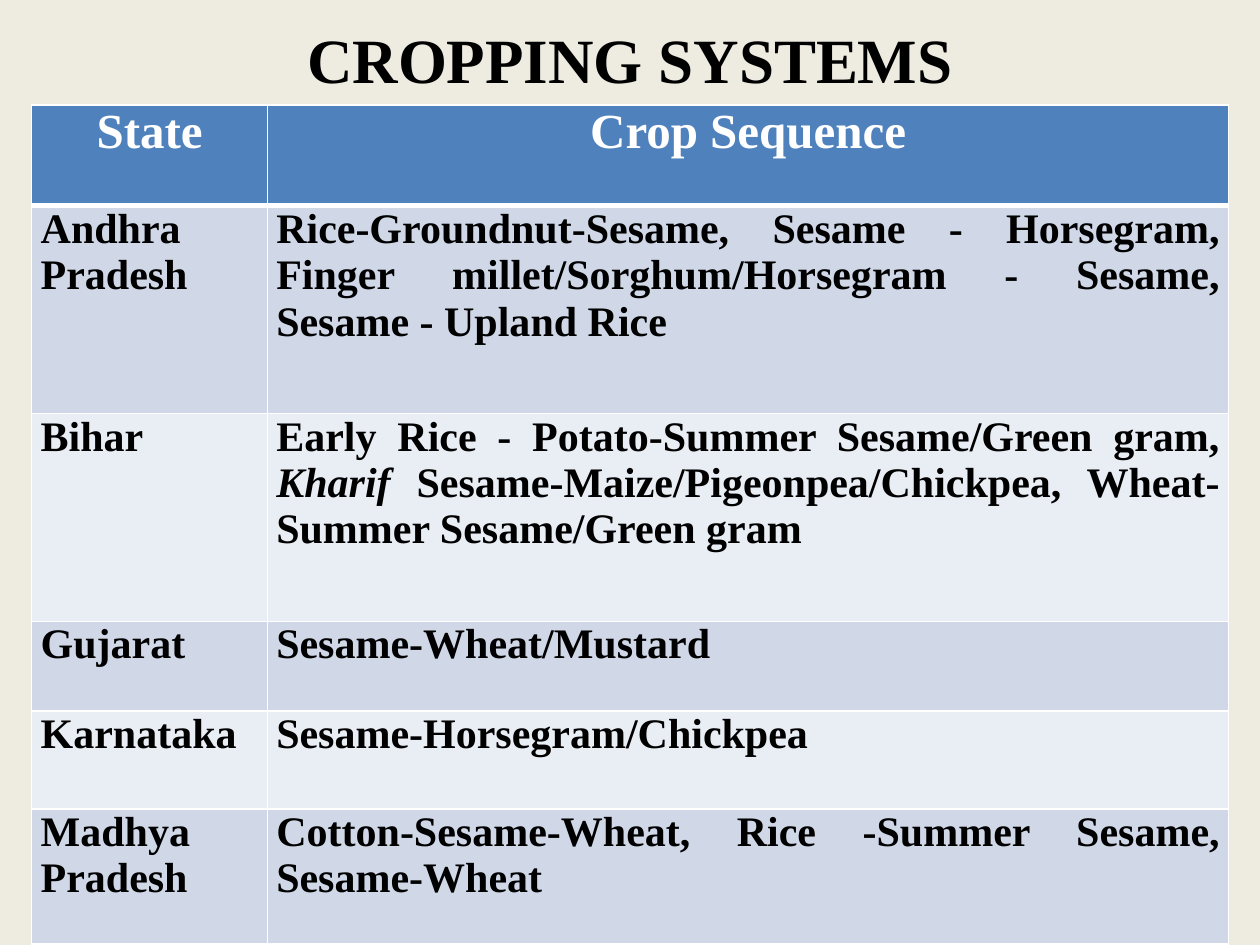
"""Build the cropping systems slide with a table of states and crop sequences."""
import pptx
import pptx.dml.color
import pptx.enum.text
import pptx.oxml
import pptx.oxml.ns
import pptx.util
from pptx.util import Cm

ALIGN = pptx.enum.text.PP_ALIGN
COLUMN_WIDTHS = [4.75, 19.38]
ROW_HEIGHTS = [2.03, 4.19, 4.19, 1.8, 1.98, 2.72]
HEADER = ["State", "Crop Sequence"]
SYSTEMS = [
    ("Andhra Pradesh", ["Rice-Groundnut-Sesame, Sesame - Horsegram, Finger "
                        "millet/Sorghum/Horsegram - Sesame, Sesame - Upland Rice"], ALIGN.JUSTIFY),
    ("Bihar", ["Early Rice - Potato-Summer Sesame/Green gram, ", "Kharif ",
               "Sesame-Maize/Pigeonpea/Chickpea, Wheat-Summer Sesame/Green gram"], ALIGN.JUSTIFY),
    ("Gujarat", ["Sesame-Wheat/Mustard"], ALIGN.LEFT),
    ("Karnataka", ["Sesame-Horsegram/Chickpea"], ALIGN.LEFT),
    ("Madhya Pradesh", ["Cotton-Sesame-Wheat, Rice -Summer Sesame, Sesame-Wheat"], ALIGN.JUSTIFY),
]


def color(value):
    return pptx.dml.color.RGBColor.from_string(value)


class SlideBuilder:
    font_name = "Times New Roman"
    background = "EEECE1"
    ink = "000000"
    white = "FFFFFF"
    header_fill = "4F81BD"
    band_fills = ["D0D8E8", "E9EDF4"]

    def __init__(self, presentation):
        self.slide = presentation.slides.add_slide(presentation.slide_layouts[5])
        fill = self.slide.background.fill
        fill.solid()
        fill.fore_color.rgb = color(self.background)

    def text(self, paragraph, pieces, size, ink, alignment):
        for index, piece in enumerate(pieces):
            run = paragraph.add_run()
            run.text = piece
            if index % 2:
                run.font.italic = True
        paragraph.alignment = alignment
        font = paragraph.font
        font.name, font.size, font.bold = self.font_name, pptx.util.Pt(size), True
        font.color.rgb = color(ink)

    def title(self, text, left, top, width, height):
        shape = self.slide.shapes.title
        shape.left, shape.top, shape.width, shape.height = map(Cm, (left, top, width, height))
        shape.text_frame.vertical_anchor = pptx.enum.text.MSO_ANCHOR.MIDDLE
        self.text(shape.text_frame.paragraphs[0], [text], 36, self.ink, ALIGN.CENTER)

    def border(self, cell, side, width):
        line = pptx.oxml.parse_xml(
            f'<a:ln{side} {pptx.oxml.ns.nsdecls("a")} w="{pptx.util.Pt(width)}">'
            f'<a:solidFill><a:srgbClr val="{self.white}"/></a:solidFill></a:ln{side}>')
        cell._tc.get_or_add_tcPr().append(line)

    def cell(self, cell, pieces, fill, size, ink, alignment, bottom=1, top=1):
        cell.margin_left = cell.margin_right = Cm(0.18)
        cell.margin_top = cell.margin_bottom = 0
        for side, width in {"L": 1, "R": 1, "T": top, "B": bottom}.items():
            self.border(cell, side, width)
        cell.fill.solid()
        cell.fill.fore_color.rgb = color(fill)
        self.text(cell.text_frame.paragraphs[0], pieces, size, ink, alignment)

    def table(self, left, top, header, systems):
        table = self.slide.shapes.add_table(
            len(ROW_HEIGHTS), len(COLUMN_WIDTHS), Cm(left), Cm(top),
            Cm(sum(COLUMN_WIDTHS)), Cm(sum(ROW_HEIGHTS))).table
        for column, width in zip(table.columns, COLUMN_WIDTHS):
            column.width = Cm(width)
        for row, height in zip(table.rows, ROW_HEIGHTS):
            row.height = Cm(height)
        for index, text in enumerate(header):
            self.cell(table.cell(0, index), [text], self.header_fill, 28, self.white,
                      ALIGN.CENTER, bottom=3)
        for index, (state, sequence, alignment) in enumerate(systems):
            fill = self.band_fills[index % 2]
            top_width = 1 if index else 3
            self.cell(table.cell(index + 1, 0), [state], fill, 24, self.ink, ALIGN.LEFT,
                      top=top_width)
            self.cell(table.cell(index + 1, 1), sequence, fill, 24, self.ink, alignment,
                      top=top_width)


def main():
    presentation = pptx.Presentation()
    presentation.slide_width, presentation.slide_height = Cm(25.4), Cm(19.05)
    builder = SlideBuilder(presentation)
    builder.title("CROPPING SYSTEMS", 1.27, 0, 22.86, 2.34)
    builder.table(0.64, 2.12, HEADER, SYSTEMS)
    presentation.save("out.pptx")


if __name__ == "__main__":
    main()
